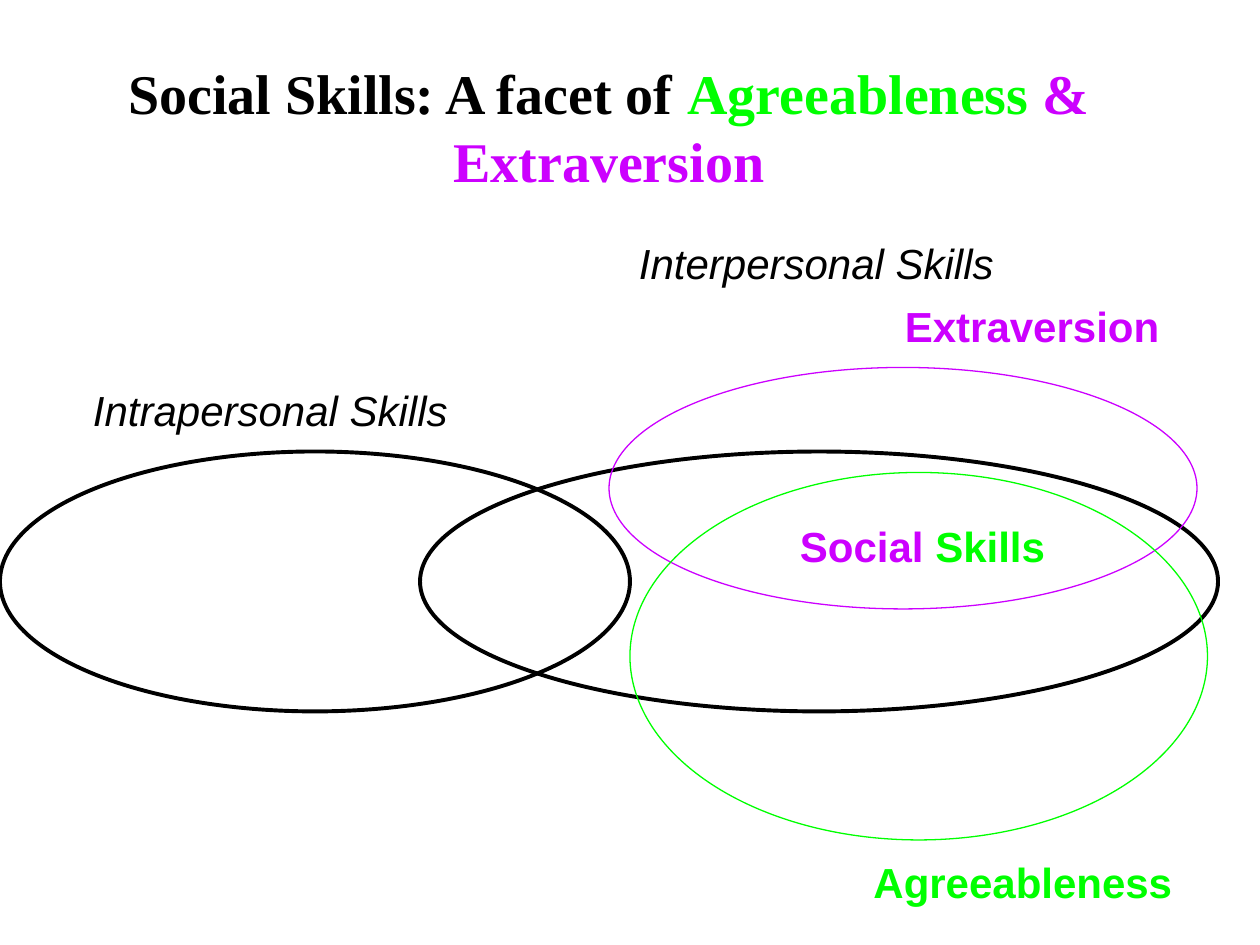
from typing import NamedTuple

from pptx import Presentation
from pptx.dml.color import RGBColor
from pptx.enum.shapes import MSO_SHAPE
from pptx.enum.text import MSO_ANCHOR, MSO_AUTO_SIZE, PP_ALIGN
from pptx.util import Inches, Pt

BLACK = RGBColor(0x00, 0x00, 0x00)
GREEN = RGBColor(0x00, 0xFF, 0x00)
PURPLE = RGBColor(0xCC, 0x00, 0xFF)

OVAL = MSO_SHAPE.OVAL
MIDDLE = MSO_ANCHOR.MIDDLE
NO_FIT, GROW = MSO_AUTO_SIZE.NONE, MSO_AUTO_SIZE.SHAPE_TO_FIT_TEXT
LEFT, CENTER = PP_ALIGN.LEFT, PP_ALIGN.CENTER

COLUMNS, ROWS = 120, 90  # grid cells of 1/12 inch
TITLE_ONLY = 5


class Box(NamedTuple):
    """Left, top, width and height in grid cells."""
    left: float
    top: float
    width: float
    height: float


class Run(NamedTuple):
    text: str
    color: RGBColor


class Ellipse(NamedTuple):
    box: Box
    color: RGBColor
    weight: float


class Label(NamedTuple):
    box: Box
    runs: list[Run]
    align: PP_ALIGN = LEFT
    bold: bool = True


TITLE_BOX = Box(0, 6, 116, 12)
TITLE = [
    Run("Social Skills: A facet of ", BLACK),
    Run("Agreeableness", GREEN),
    Run(" & Extraversion", PURPLE),
]

ELLIPSES = [
    Ellipse(Box(0, 43, 60, 24.75), BLACK, 2.25),
    Ellipse(Box(40, 43, 76, 24.75), BLACK, 2.25),
    Ellipse(Box(58, 35, 56, 23), PURPLE, 0.75),
    Ellipse(Box(60, 45, 55, 35), GREEN, 0.75),
]

LABELS = [
    Label(Box(4, 36, 43.5, 6), [Run("Intrapersonal Skills", BLACK)], CENTER, False),
    Label(Box(56, 22, 43.5, 6), [Run("Interpersonal Skills", BLACK)], CENTER, False),
    Label(Box(85, 28, 30, 6), [Run("Extraversion", PURPLE)]),
    Label(Box(75, 49, 28, 6), [Run("Social ", PURPLE), Run("Skills", GREEN)]),
    Label(Box(82, 81, 33, 6), [Run("Agreeableness", GREEN)]),
]


def to_lengths(prs, box: Box) -> list[int]:
    cell_w, cell_h = prs.slide_width / COLUMNS, prs.slide_height / ROWS
    return [round(n * cell) for n, cell in zip(box, (cell_w, cell_h) * 2)]


def write_runs(p, runs: list[Run], font_name: str, size: int,
               align: PP_ALIGN, bold: bool) -> None:
    p.alignment = align
    p.font.name, p.font.size = font_name, Pt(size)
    p.font.bold, p.font.italic = bold, not bold
    for run in runs:
        r = p.add_run()
        r.text = run.text
        r.font.color.rgb = run.color


def add_title(prs, s) -> None:
    sp = s.shapes.title
    sp.left, sp.top, sp.width, sp.height = to_lengths(prs, TITLE_BOX)
    tf = sp.text_frame
    tf.word_wrap, tf.auto_size, tf.vertical_anchor = True, NO_FIT, MIDDLE
    write_runs(tf.paragraphs[0], TITLE, "Times New Roman", 32, CENTER, True)


def add_ellipse(prs, s, ellipse: Ellipse) -> None:
    sp = s.shapes.add_shape(OVAL, *to_lengths(prs, ellipse.box))
    sp.shadow.inherit = False
    sp.fill.background()
    sp.line.color.rgb = ellipse.color
    sp.line.width = Pt(ellipse.weight)


def add_label(prs, s, label: Label) -> None:
    tf = s.shapes.add_textbox(*to_lengths(prs, label.box)).text_frame
    tf.word_wrap, tf.auto_size = True, GROW
    write_runs(tf.paragraphs[0], label.runs, "Arial", 24, label.align, label.bold)


def main() -> None:
    prs = Presentation()
    prs.slide_width, prs.slide_height = Inches(10), Inches(7.5)
    s = prs.slides.add_slide(prs.slide_layouts[TITLE_ONLY])
    add_title(prs, s)
    for ellipse in ELLIPSES:
        add_ellipse(prs, s, ellipse)
    for label in LABELS:
        add_label(prs, s, label)
    prs.save("out.pptx")


if __name__ == "__main__":
    main()
